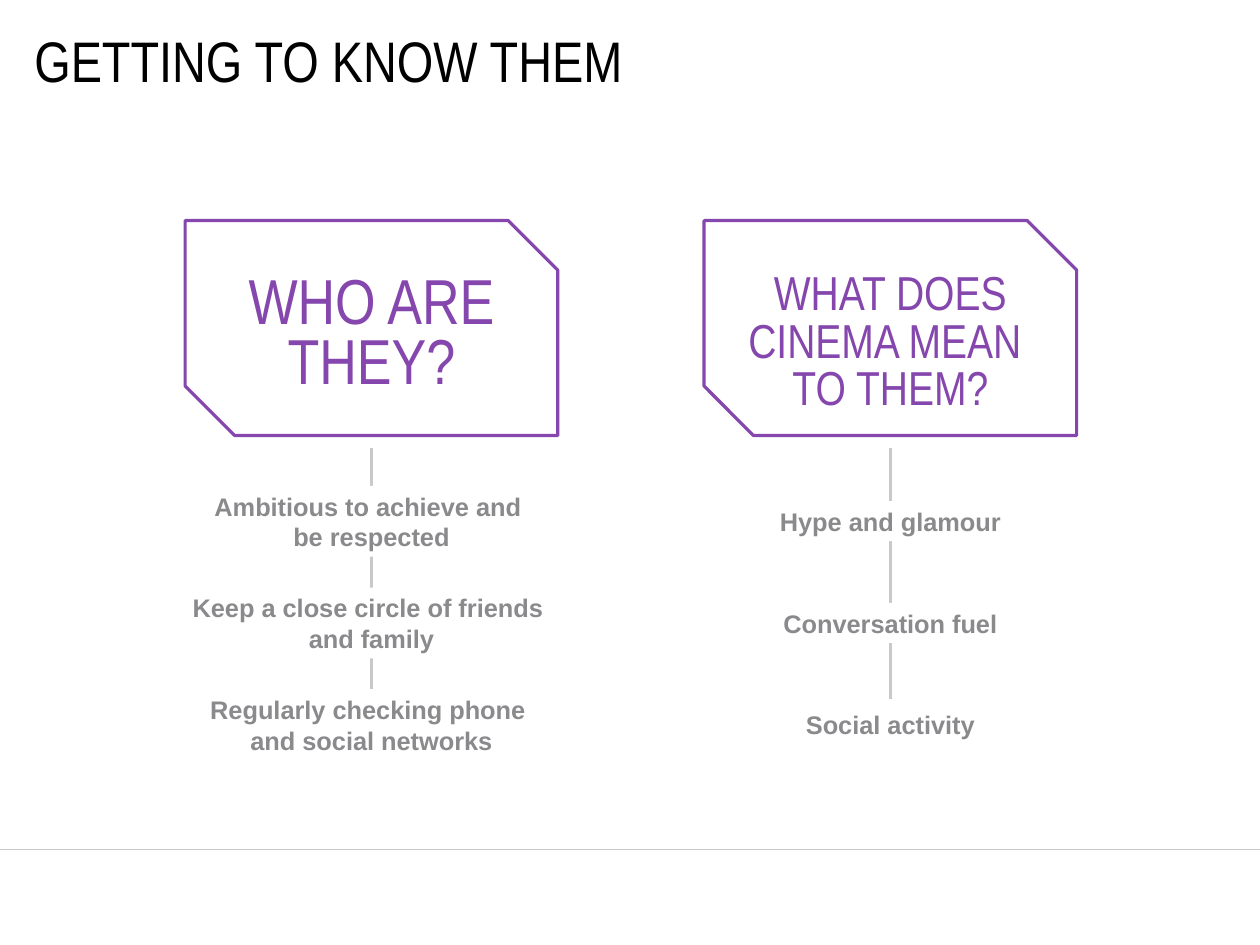
from dataclasses import dataclass

from lxml import etree
from pptx import Presentation
from pptx.dml.color import RGBColor
from pptx.enum.shapes import MSO_CONNECTOR, MSO_SHAPE
from pptx.enum.text import MSO_ANCHOR, PP_ALIGN
from pptx.oxml.ns import qn
from pptx.util import Cm, Inches, Pt

STRAIGHT = MSO_CONNECTOR.STRAIGHT
SNIPPED = MSO_SHAPE.SNIP_2_DIAG_RECTANGLE
RECTANGLE = MSO_SHAPE.RECTANGLE
MIDDLE = MSO_ANCHOR.MIDDLE
LEFT, CENTER = PP_ALIGN.LEFT, PP_ALIGN.CENTER


@dataclass(frozen=True)
class Theme:
    ink: RGBColor = RGBColor(0x00, 0x00, 0x00)
    accent: RGBColor = RGBColor(0x85, 0x47, 0xAD)
    label: RGBColor = RGBColor(0x8A, 0x8A, 0x8D)
    rule: RGBColor = RGBColor(0xCA, 0xC8, 0xC8)
    paper: RGBColor = RGBColor(0xFF, 0xFF, 0xFF)
    heading_font: str = "Arial Narrow"
    body_font: str = "Arial"
    title_size: int = 36
    label_size: int = 16
    thin: float = 0.5
    thick: float = 2


@dataclass(frozen=True)
class Topic:
    heading: list[str]
    heading_size: int
    heading_spacing: int
    heading_middle: float
    heading_height: float
    labels: list[list[str]]
    label_height: float


THEME = Theme()
SLIDE_WIDTH, SLIDE_HEIGHT = Cm(28), Cm(21)

# Grid in inches: two columns by their centres, three label rows by their middles
FIRST_COLUMN, COLUMN_STEP = 3.25, 4.54
FIRST_ROW, ROW_STEP = 4.56, 0.89
CARD_WIDTH, CARD_HEIGHT, CARD_MIDDLE = 3.26, 1.88, 2.87
HEADING_WIDTH, LABEL_WIDTH = 3.04, 3.91
SPINE_TOP, SPINE_BOTTOM = 3.92, 6.12
FOOTER_TOP = 7.43

TOPICS = [
    Topic(["WHO ARE THEY?"], 40, 38, 2.95, 1.17,
          [["Ambitious to achieve and ", "be respected"],
           ["Keep a close circle of friends ", "and family"],
           ["Regularly checking phone ", "and social networks"]], 0.62),
    Topic(["WHAT DOES", "CINEMA MEAN ", "TO THEM?"], 30, 30, 3.01, 1.36,
          [["Hype and glamour"], ["Conversation fuel"], ["Social activity"]], 0.35),
]


def centred_box(center: float, middle: float, width: float, height: float) -> list[int]:
    return [Inches(value) for value in
            (center - width / 2, middle - height / 2, width, height)]


def add_run(paragraph, text: str, font_name: str, size: int,
            color: RGBColor, bold: bool = False) -> None:
    run = paragraph.add_run()
    run.text = text
    run.font.name = font_name
    run.font.size = Pt(size)
    run.font.bold = bold
    run.font.color.rgb = color


def add_rule(slide, start: tuple[int, int], end: tuple[int, int],
             width: float) -> None:
    connector = slide.shapes.add_connector(STRAIGHT, *start, *end)
    connector.line.color.rgb = THEME.rule
    connector.line.width = Pt(width)
    properties = connector._element.find(qn("p:spPr"))
    etree.SubElement(properties, qn("a:effectLst"))


def set_title(slide, text: str) -> None:
    title = slide.shapes.title
    title.left, title.top = Inches(0.3), Inches(0.3)
    title.width, title.height = Inches(10.18), Inches(0.45)
    frame = title.text_frame
    frame.margin_left = frame.margin_top = frame.margin_right = frame.margin_bottom = 0
    frame.vertical_anchor = MIDDLE
    frame.word_wrap = False
    paragraph = frame.paragraphs[0]
    paragraph.alignment = LEFT
    add_run(paragraph, text, THEME.heading_font, THEME.title_size, THEME.ink)


def add_card(slide, center: float) -> None:
    card = slide.shapes.add_shape(
        SNIPPED, *centred_box(center, CARD_MIDDLE, CARD_WIDTH, CARD_HEIGHT))
    card.adjustments[0], card.adjustments[1] = 0, 0.23
    card.shadow.inherit = False
    card.fill.background()
    card.line.color.rgb = THEME.accent
    card.line.width = Pt(THEME.thick)


def add_heading(slide, center: float, topic: Topic) -> None:
    box = slide.shapes.add_textbox(*centred_box(
        center, topic.heading_middle, HEADING_WIDTH, topic.heading_height))
    frame = box.text_frame
    frame.word_wrap = True
    frame.vertical_anchor = MIDDLE
    paragraph = frame.paragraphs[0]
    paragraph.alignment = CENTER
    paragraph.line_spacing = Pt(topic.heading_spacing)
    for index, line in enumerate(topic.heading):
        if index:
            paragraph.add_line_break()
        add_run(paragraph, line, THEME.heading_font, topic.heading_size, THEME.accent)


def add_label(slide, center: float, middle: float, height: float,
              lines: list[str]) -> None:
    label = slide.shapes.add_shape(
        RECTANGLE, *centred_box(center, middle, LABEL_WIDTH, height))
    label.shadow.inherit = False
    label.fill.solid()
    label.fill.fore_color.rgb = THEME.paper
    label.line.fill.background()
    frame = label.text_frame
    frame.word_wrap = True
    frame.vertical_anchor = MIDDLE
    frame.margin_top = frame.margin_bottom = Inches(0.04)
    for index, line in enumerate(lines):
        paragraph = frame.add_paragraph() if index else frame.paragraphs[0]
        paragraph.alignment = CENTER
        add_run(paragraph, line, THEME.body_font, THEME.label_size, THEME.label, True)


def add_topic(slide, center: float, topic: Topic) -> None:
    add_card(slide, center)
    add_heading(slide, center, topic)
    # The labels cover parts of the spine
    add_rule(slide, (Inches(center), Inches(SPINE_TOP)),
             (Inches(center), Inches(SPINE_BOTTOM)), THEME.thick)
    for row, lines in enumerate(topic.labels):
        add_label(slide, center, FIRST_ROW + row * ROW_STEP, topic.label_height, lines)


def main() -> None:
    presentation = Presentation()
    presentation.slide_width = SLIDE_WIDTH
    presentation.slide_height = SLIDE_HEIGHT
    slide = presentation.slides.add_slide(
        presentation.slide_layouts.get_by_name("Title Only"))

    # Title and footer rule
    set_title(slide, "GETTING TO KNOW THEM")
    add_rule(slide, (0, Inches(FOOTER_TOP)), (SLIDE_WIDTH, Inches(FOOTER_TOP)),
             THEME.thin)

    # One column for each topic
    for column, topic in enumerate(TOPICS):
        add_topic(slide, FIRST_COLUMN + column * COLUMN_STEP, topic)

    presentation.save("out.pptx")


if __name__ == "__main__":
    main()
